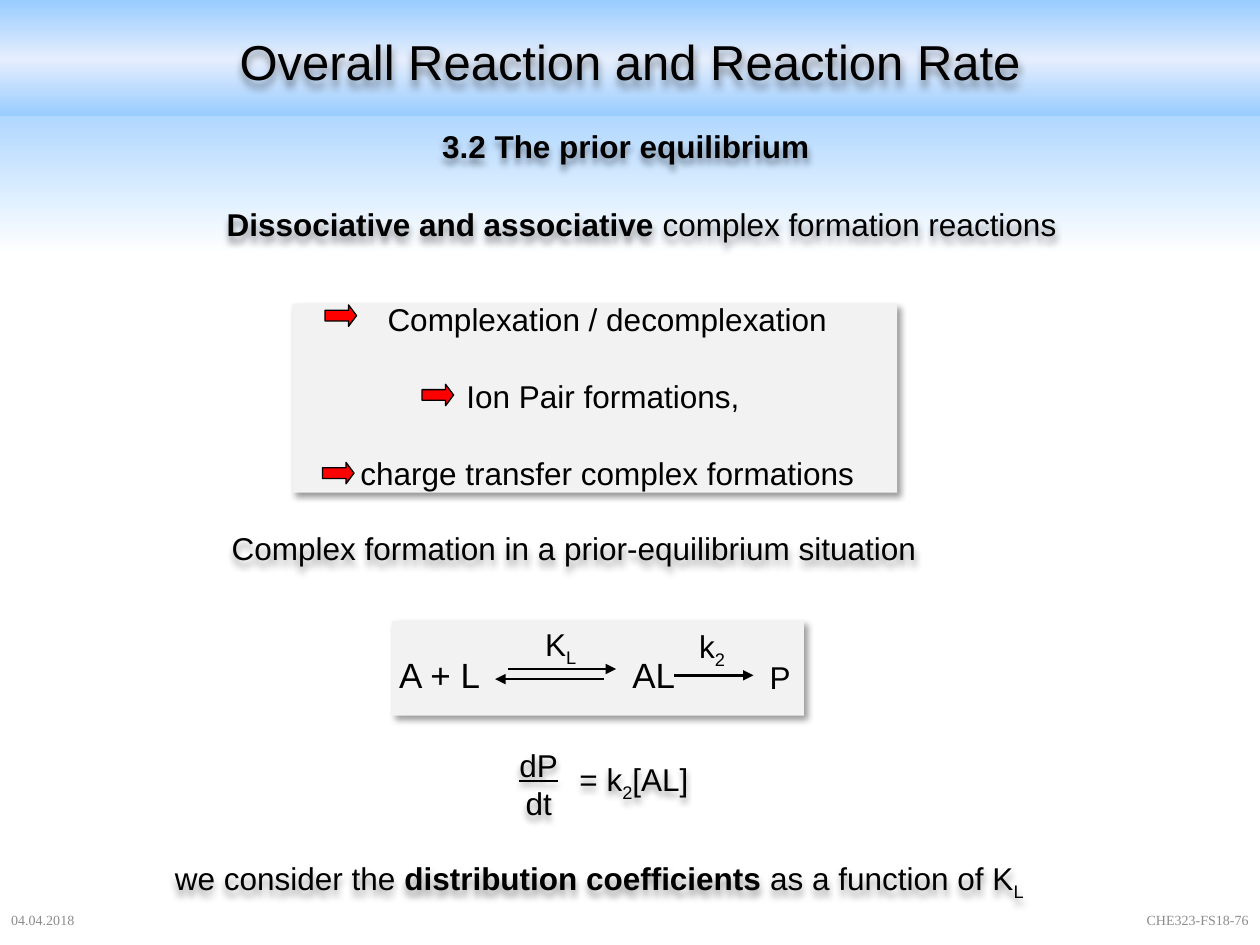
"""Build the slide on the prior equilibrium and its reaction rate."""
import lxml.etree
import pptx
import pptx.dml.color
import pptx.enum.shapes
import pptx.enum.text
import pptx.oxml
import pptx.oxml.ns
import pptx.util

Inches, Pt = pptx.util.Inches, pptx.util.Pt
qn = pptx.oxml.ns.qn
RGB = pptx.dml.color.RGBColor.from_string
SHAPES = pptx.enum.shapes.MSO_SHAPE
ALIGN = {
    "l": pptx.enum.text.PP_ALIGN.LEFT,
    "c": pptx.enum.text.PP_ALIGN.CENTER,
    "r": pptx.enum.text.PP_ALIGN.RIGHT,
}
COLORS = {
    "sky": "99CCFF",
    "pale": "E5EEFD",
    "white": "FFFFFF",
    "panel": "F2F2F2",
    "arrow": "FF0000",
    "ink": "000000",
    "footer": "8C8C8C",
}
NS = 'xmlns:a="http://schemas.openxmlformats.org/drawingml/2006/main"'

deck = pptx.Presentation()
deck.slide_width, deck.slide_height = Inches(10), Inches(7.5)
slide = deck.slides.add_slide(deck.slide_layouts[6])


def add_shadow(shape, angle):
    shape.element.spPr.append(pptx.oxml.parse_xml(
        f'<a:effectLst {NS}><a:outerShdw blurRad="{Pt(4)}" dist="{Pt(3)}" '
        f'dir="{angle * 60000}" algn="tl" rotWithShape="0"><a:srgbClr val="{COLORS["ink"]}">'
        '<a:alpha val="40000"/></a:srgbClr></a:outerShdw></a:effectLst>'))


def add_text(place, paragraphs, size=18, align="l", wrap=False, grow=True,
             font="Arial", color="ink", shadow=False, gap=0):
    box = slide.shapes.add_textbox(*map(Inches, place))
    frame = box.text_frame
    frame.word_wrap = wrap
    if grow:
        frame.auto_size = pptx.enum.text.MSO_AUTO_SIZE.SHAPE_TO_FIT_TEXT
    else:
        frame.vertical_anchor = pptx.enum.text.MSO_ANCHOR.MIDDLE
    for index, runs in enumerate(paragraphs):
        paragraph = frame.add_paragraph() if index else frame.paragraphs[0]
        paragraph.alignment = ALIGN[align]
        if index and gap:
            paragraph.space_before = Pt(gap)
        for text, style in runs:
            run = paragraph.add_run()
            run.text = text
            run.font.name, run.font.size = font, Pt(size)
            run.font.color.rgb = RGB(COLORS[color])
            run.font.bold = style == "bold"
            run.font.underline = style == "underline"
            if style == "sub":
                run.font._element.set("baseline", "-25000")
    if shadow:
        add_shadow(box, 90)
    return box


header = slide.shapes.add_shape(SHAPES.RECTANGLE, 0, 0, Inches(10), Inches(0.92))
header.shadow.inherit = False
header.line.fill.background()
for fill, owner, stops in [
    (slide.background.fill, slide.background, [(8, "sky"), (27, "white")]),
    (header.fill, header, [(0, "sky"), (51, "pale"), (100, "sky")]),
]:
    fill.gradient()
    fill.gradient_angle = 270
    root = header.element if owner is header else slide.element
    stop_list = next(root.iter(qn("a:gsLst")))
    for stop in list(stop_list):
        stop_list.remove(stop)
    for position, name in stops:
        stop = lxml.etree.SubElement(stop_list, qn("a:gs"), pos=str(position * 1000))
        lxml.etree.SubElement(stop, qn("a:srgbClr"), val=COLORS[name])

for place in [(3.11, 4.93, 3.27, 0.75), (2.32, 2.41, 4.8, 1.5)]:
    panel = slide.shapes.add_shape(SHAPES.RECTANGLE, *map(Inches, place))
    panel.fill.solid()
    panel.fill.fore_color.rgb = RGB(COLORS["panel"])
    panel.line.fill.background()
    add_shadow(panel, 45)

equilibrium = add_text((3.07, 5.14, 2.55, 0.44), [[("A + L\tAL", "")]], size=20, wrap=True)
tabs = lxml.etree.SubElement(
    equilibrium.text_frame.paragraphs[0]._p.get_or_add_pPr(), qn("a:tabLst"))
lxml.etree.SubElement(tabs, qn("a:tab"), pos=str(Inches(1.85)), algn="l")

add_text((4.2, 4.91, 0.5, 0.4), [[("K", ""), ("L", "sub")]], align="c", wrap=True)
add_text((2.74, 2.33, 4.16, 1.62), [
    [("Complexation / decomplexation", "")],
    [("Ion Pair formations, ", "")],
    [("charge transfer complex formations", "")],
], align="c", gap=22.4)

for left, top in [(2.58, 2.42), (3.35, 3.05), (2.56, 3.67)]:
    pointer = slide.shapes.add_shape(
        SHAPES.RIGHT_ARROW, Inches(left), Inches(top), Inches(0.25), Inches(0.17))
    pointer.shadow.inherit = False
    pointer.adjustments[0], pointer.adjustments[1] = 0.5, 0.375
    pointer.fill.solid()
    pointer.fill.fore_color.rgb = RGB(COLORS["arrow"])
    pointer.line.color.rgb = RGB(COLORS["ink"])
    pointer.line.width = Pt(0.75)

for left, text, align in [(-0.01, "04.04.2018", "l"), (7.76, "CHE323-FS18-76", "r")]:
    add_text((left, 7.1, 2.25, 0.4), [[(text, "")]], size=8, align=align, wrap=True,
             grow=False, font="Times New Roman", color="footer")

add_text((0.75, 0.29, 8.5, 0.39), [[("Overall Reaction and Reaction Rate", "")]],
         size=28, align="c", wrap=True, grow=False, shadow=True)

for place, runs in [
    ((3.41, 0.96, 3.15, 0.4), [("3.2 The prior equilibrium", "bold")]),
    ((1.7, 1.58, 6.85, 0.4), [("Dissociative and associative", "bold"),
                              (" complex formation reactions", "")]),
    ((1.74, 4.15, 5.69, 0.4), [("Complex formation in a prior-equilibrium situation", "")]),
    ((4.5, 5.98, 1.09, 0.4), [("= k", ""), ("2", "sub"), ("[AL]", "")]),
    ((1.29, 6.77, 7.01, 0.4), [("we consider the ", ""), ("distribution coefficients", "bold"),
                               (" as a function of K", ""), ("L", "sub")]),
]:
    add_text(place, [runs], shadow=True)

add_text((4.02, 5.87, 0.51, 0.71), [[("dP", "underline")], [("dt", "")]],
         align="c", shadow=True)
add_text((6.01, 5.17, 0.37, 0.4), [[("P", "")]])
add_text((5.45, 4.93, 0.42, 0.4), [[("k", ""), ("2", "sub")]])

for start, end, level in [(5.35, 5.98, 5.36), (4.03, 4.89, 5.31), (4.79, 3.93, 5.39)]:
    reaction = slide.shapes.add_connector(
        pptx.enum.shapes.MSO_CONNECTOR.STRAIGHT,
        Inches(start), Inches(level), Inches(end), Inches(level))
    reaction.line.color.rgb = RGB(COLORS["ink"])
    reaction.line.width = Pt(1.5)
    lxml.etree.SubElement(reaction.line._get_or_add_ln(), qn("a:tailEnd"), type="triangle")
    lxml.etree.SubElement(reaction.element.spPr, qn("a:effectLst"))

deck.save("out.pptx")
